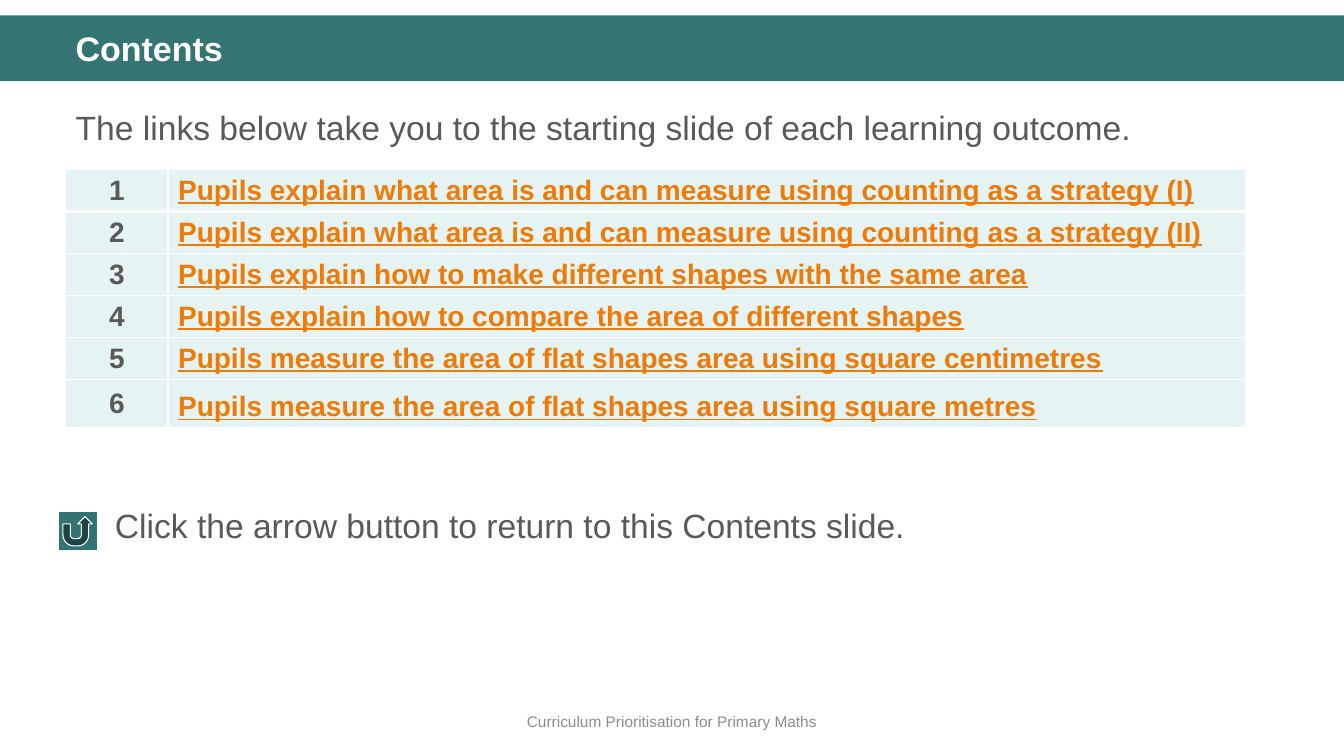
from dataclasses import dataclass

from lxml.etree import SubElement
from pptx import Presentation
from pptx.dml.color import RGBColor
from pptx.enum.shapes import MSO_SHAPE as Shape
from pptx.enum.text import MSO_ANCHOR as Anchor, PP_ALIGN as Align
from pptx.oxml import parse_xml
from pptx.oxml.ns import nsdecls, qn
from pptx.util import Pt


@dataclass(frozen=True)
class Theme:
    font: str = "Arial"
    teal: str = "347574"
    button: str = "327473"
    pale: str = "E5F3F2"
    white: str = "FFFFFF"
    text: str = "595959"
    link: str = "EE7B08"
    muted: str = "8C8C8C"
    title_size: float = 24.3
    body_size: float = 24
    table_size: float = 20
    footer_size: float = 11


THEME = Theme()
OUTCOMES = [
    "Pupils explain what area is and can measure using counting as a strategy (I)",
    "Pupils explain what area is and can measure using counting as a strategy (II)",
    "Pupils explain how to make different shapes with the same area",
    "Pupils explain how to compare the area of different shapes",
    "Pupils measure the area of flat shapes area using square centimetres",
    "Pupils measure the area of flat shapes area using square metres",
]


def rgb(color):
    return RGBColor.from_string(color)


def write(tf, text, size, color, bold=False, underline=False,
          align=Align.LEFT, spacing=1.0):
    p = tf.paragraphs[0]
    p.text = text
    p.alignment = align
    p.line_spacing = spacing
    font = p.font
    font.name, font.size = THEME.font, Pt(size)
    font.bold, font.underline = bold, underline
    font.color.rgb = rgb(color)


def add_text(s, box, text, size, color, anchor=Anchor.TOP, **style):
    tf = s.shapes.add_textbox(*map(Pt, box)).text_frame
    tf.word_wrap = True
    tf.vertical_anchor = anchor
    write(tf, text, size, color, **style)


def add_block(s, kind, box, fill, line=None):
    sp = s.shapes.add_shape(kind, *map(Pt, box))
    sp.shadow.inherit = False
    sp.fill.solid()
    sp.fill.fore_color.rgb = rgb(fill)
    if line:
        sp.line.color.rgb = rgb(line)
        sp.line.width = Pt(0.75)
    else:
        sp.line.fill.background()


def set_borders(cell, bottom):
    """Draw white cell borders, with the bottom one as wide as given."""
    tc_pr = cell._tc.get_or_add_tcPr()
    widths = {"lnL": 1, "lnR": 1, "lnT": 1, "lnB": bottom}
    for i, (side, width) in enumerate(widths.items()):
        ln = parse_xml(f'<a:{side} {nsdecls("a")} w="{Pt(width)}"/>')
        fill = SubElement(ln, qn("a:solidFill"))
        SubElement(fill, qn("a:srgbClr"), val=THEME.white)
        tc_pr.insert(i, ln)


def fill_cell(cell, text, color, bottom, **style):
    cell.fill.solid()
    cell.fill.fore_color.rgb = rgb(THEME.pale)
    cell.vertical_anchor = Anchor.MIDDLE
    cell.margin_top = cell.margin_bottom = Pt(3)
    write(cell.text_frame, text, THEME.table_size, color, bold=True, **style)
    set_borders(cell, bottom)


def add_outcomes(s, left, top, widths, row_height):
    count = len(OUTCOMES)
    table = s.shapes.add_table(count, len(widths), Pt(left), Pt(top),
                               Pt(sum(widths)), Pt(row_height * count)).table
    for column, width in zip(table.columns, widths):
        column.width = Pt(width)
    for i, outcome in enumerate(OUTCOMES):
        table.rows[i].height = Pt(row_height)
        bottom = 3 if i == 0 else 1
        spacing = 1.2 if i == count - 1 else 1.0
        fill_cell(table.cell(i, 0), str(i + 1), THEME.text, bottom,
                  align=Align.CENTER)
        fill_cell(table.cell(i, 1), outcome, THEME.link, bottom,
                  underline=True, spacing=spacing)


def main():
    prs = Presentation()
    prs.slide_width, prs.slide_height = Pt(960), Pt(540)
    s = prs.slides.add_slide(prs.slide_layouts[6])

    add_block(s, Shape.RECTANGLE, (0, 11, 960, 47), THEME.teal)
    add_text(s, (47, 19.4, 877, 34), "Contents", THEME.title_size,
             THEME.white, bold=True, spacing=0.9)
    add_text(s, (47, 67, 877, 44),
             "The links below take you to the starting slide of each learning outcome.",
             THEME.body_size, THEME.text, spacing=1.2)
    add_outcomes(s, 47, 121, (73, 770), 29.5)
    add_block(s, Shape.ACTION_BUTTON_RETURN, (41.5, 365.5, 28, 28),
              THEME.button, THEME.white)
    add_text(s, (75, 357, 815, 36),
             "Click the arrow button to return to this Contents slide.",
             THEME.body_size, THEME.text)
    add_text(s, (0, 500.5, 960, 29), "Curriculum Prioritisation for Primary Maths",
             THEME.footer_size, THEME.muted, Anchor.MIDDLE, align=Align.CENTER)

    prs.save("out.pptx")


if __name__ == "__main__":
    main()
